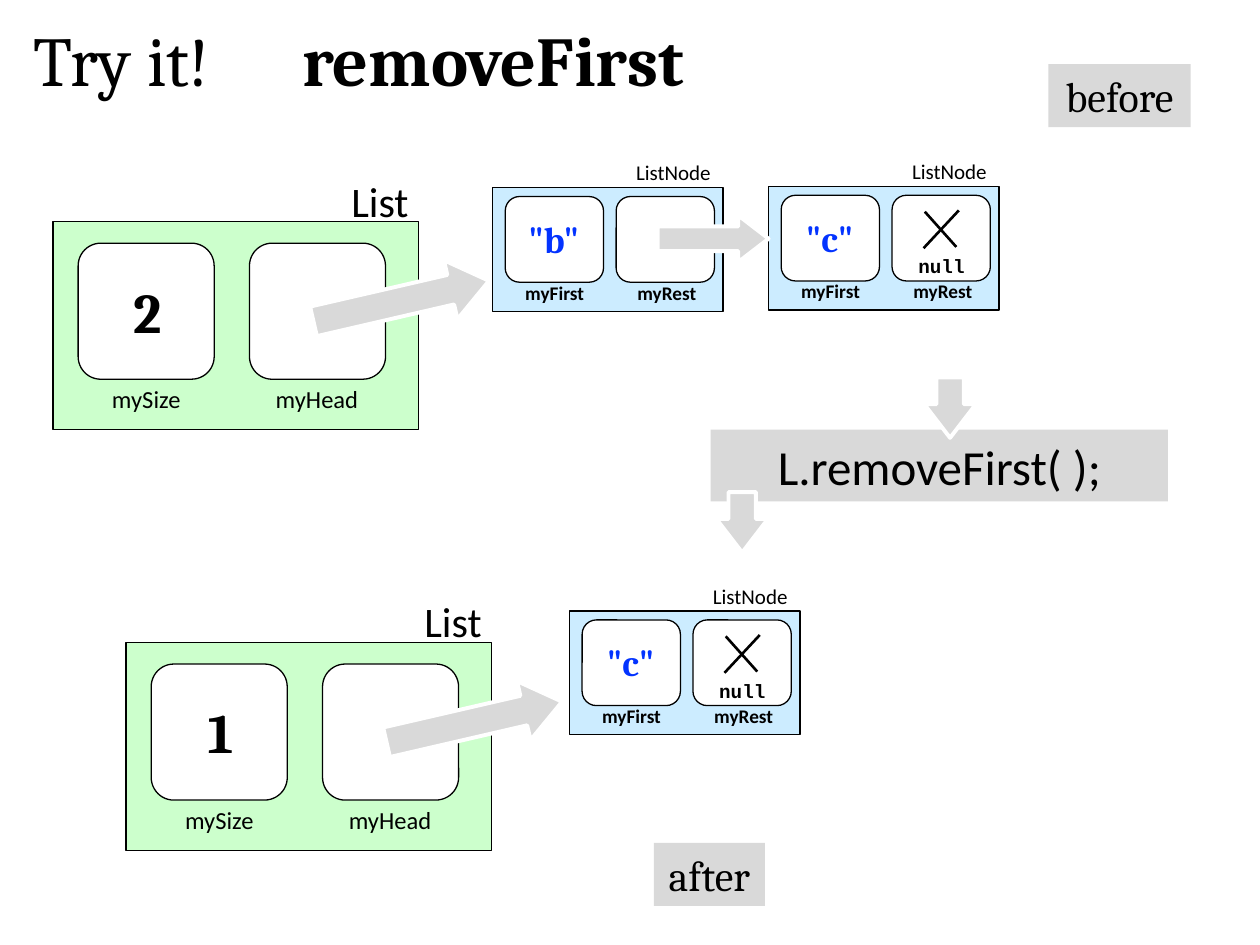
import pptx
import pptx.util
import pptx.dml.color
import pptx.enum.shapes
import pptx.enum.text
import pptx.oxml
import pptx.oxml.ns

Inches, Pt = pptx.util.Inches, pptx.util.Pt
SHAPE = pptx.enum.shapes.MSO_SHAPE
ALIGN = pptx.enum.text.PP_ALIGN

# Content: lists and nodes as left, top, value(s)
COLOR = {"ink": "000000", "paper": "FFFFFF", "gray": "D9D9D9",
         "green": "CCFFCC", "blue": "CCECFF", "value": "0333FF"}
TITLE = [("Try it!\t", False), ("removeFirst", True)]
LISTS = [(0.42, 1.76, "2"), (1.0, 5.1, "1")]
NODES = [(6.1, 1.48, '"c"', True), (3.91, 1.49, '"b"', False),
         (4.52, 4.85, '"c"', True)]  # True: the rest is null
BANNERS = [("L.removeFirst( );", 5.64, 3.41, 3.63, 0.57, 28, "Calibri"),
           ("before", 8.32, 0.51, 1.13, 0.5, 24, "Cambria"),
           ("after", 5.19, 6.69, 0.88, 0.5, 24, "Cambria")]
ARROWS = [(5.22, 1.71, 0.88, 0.37, 0), (7.3, 3.03, 0.48, 0.41, 90),
          (5.65, 3.94, 0.48, 0.41, 90)]

# Offsets inside a list or a node
LIST_CELLS = [("mySize", 0.2, 0.37, 0.75), ("myHead", 1.56, 1.67, 0.86)]
NODE_CELLS = [("myFirst", 0.1, 0.16, 0.68), ("myRest", 0.98, 1.05, 0.68)]
CROSS = [(1.24, 0.2, 1.49, 0.48), (1.23, 0.49, 1.51, 0.19)]

deck = pptx.Presentation()
deck.slide_width, deck.slide_height = Inches(10), Inches(7.5)
slide = deck.slides.add_slide(deck.slide_layouts[6])


def rgb(name):
    return pptx.dml.color.RGBColor.from_string(COLOR[name])


def write(frame, runs, size, font, color="ink", center=False, wrap=True):
    frame.word_wrap = wrap
    frame.auto_size = pptx.enum.text.MSO_AUTO_SIZE.SHAPE_TO_FIT_TEXT
    para = frame.paragraphs[0]
    para.alignment = ALIGN.CENTER if center else ALIGN.LEFT
    for text, bold in runs:
        run = para.add_run()
        run.text = text
        run.font.size, run.font.name, run.font.bold = Pt(size), font, bold
        run.font.color.rgb = rgb(color)
    return para


def label(text, x, y, w, h, size, font="Calibri", bold=False,
          color="ink", center=False):
    box = slide.shapes.add_textbox(Inches(x), Inches(y), Inches(w), Inches(h))
    write(box.text_frame, [(text, bold)], size, font, color, center, center)


def block(kind, x, y, w, h, fill, line=None, width=0.75):
    shape = slide.shapes.add_shape(kind, Inches(x), Inches(y),
                                   Inches(w), Inches(h))
    shape.shadow.inherit = False
    shape.fill.solid()
    shape.fill.fore_color.rgb = rgb(fill)
    if line:
        shape.line.color.rgb = rgb(line)
        shape.line.width = Pt(width)
    else:
        shape.line.fill.background()
    return shape


def arrow(x, y, w, h, turn, neck=0.53):
    shape = block(SHAPE.RIGHT_ARROW, x, y, w, h, "gray", "paper", 2.25)
    shape.adjustments[0], shape.adjustments[1] = neck, 0.65
    shape.rotation = turn


def cross(x, y):
    group = slide.shapes.add_group_shape()
    for x1, y1, x2, y2 in CROSS:
        line = group.shapes.add_connector(
            pptx.enum.shapes.MSO_CONNECTOR.STRAIGHT, Inches(x + x1),
            Inches(y + y1), Inches(x + x2), Inches(y + y2))
        line.line.color.rgb = rgb("ink")
        line.line.width = Pt(1.5)
        line._element.spPr.append(pptx.oxml.parse_xml(
            "<a:effectLst %s/>" % pptx.oxml.ns.nsdecls("a")))


# Title, with a tab stop between its two parts
box = slide.shapes.add_textbox(Inches(0.17), Inches(0.08),
                               Inches(8.23), Inches(0.77))
para = write(box.text_frame, TITLE, 40, "Cambria")
para._p.get_or_add_pPr().append(pptx.oxml.parse_xml(
    '<a:tabLst %s><a:tab pos="%d" algn="l"/></a:tabLst>'
    % (pptx.oxml.ns.nsdecls("a"), Inches(2.13))))

# Gray banners
for text, x, y, w, h, size, font in BANNERS:
    shape = block(SHAPE.RECTANGLE, x, y, w, h, "gray")
    write(shape.text_frame, [(text, False)], size, font, center=True,
          wrap=w > 2)

# Nodes
for x, y, value, last in NODES:
    block(SHAPE.RECTANGLE, x, y, 1.83, 0.98, "blue", "ink")
    for name, left, inset, w in NODE_CELLS:
        block(SHAPE.ROUNDED_RECTANGLE, x + left, y + 0.07, 0.78, 0.68,
              "paper", "ink")
        label(name, x + inset, y + 0.69, w, 0.29, 11, bold=True)
    label(value, x + 0.14, y + 0.18, 0.69, 0.45, 21, "Cambria", True,
          "value", True)
    label("ListNode", x + 1.04, y - 0.27, 0.8, 0.3, 12)
    if last:
        cross(x, y)
        label("null", x + 1.09, y + 0.49, 0.57, 0.29, 11, "Courier New", True)

# Lists, each with the arrow from its head
for x, y, size in LISTS:
    block(SHAPE.RECTANGLE, x, y, 2.9, 1.65, "green", "ink")
    for name, left, inset, w in LIST_CELLS:
        block(SHAPE.ROUNDED_RECTANGLE, x + left, y + 0.17, 1.08, 1.08,
              "paper", "ink")
        label(name, x + inset, y + 1.24, w, 0.34, 14)
    label("List", x + 2.27, y - 0.42, 0.66, 0.5, 24)
    label(size, x + 0.47, y + 0.39, 0.56, 0.64, 32, "Cambria", True,
          center=True)
    arrow(x + 2.05, y + 0.39, 1.43, 0.48, 347, 0.5)

# Other arrows
for place in ARROWS:
    arrow(*place)

deck.save("out.pptx")
